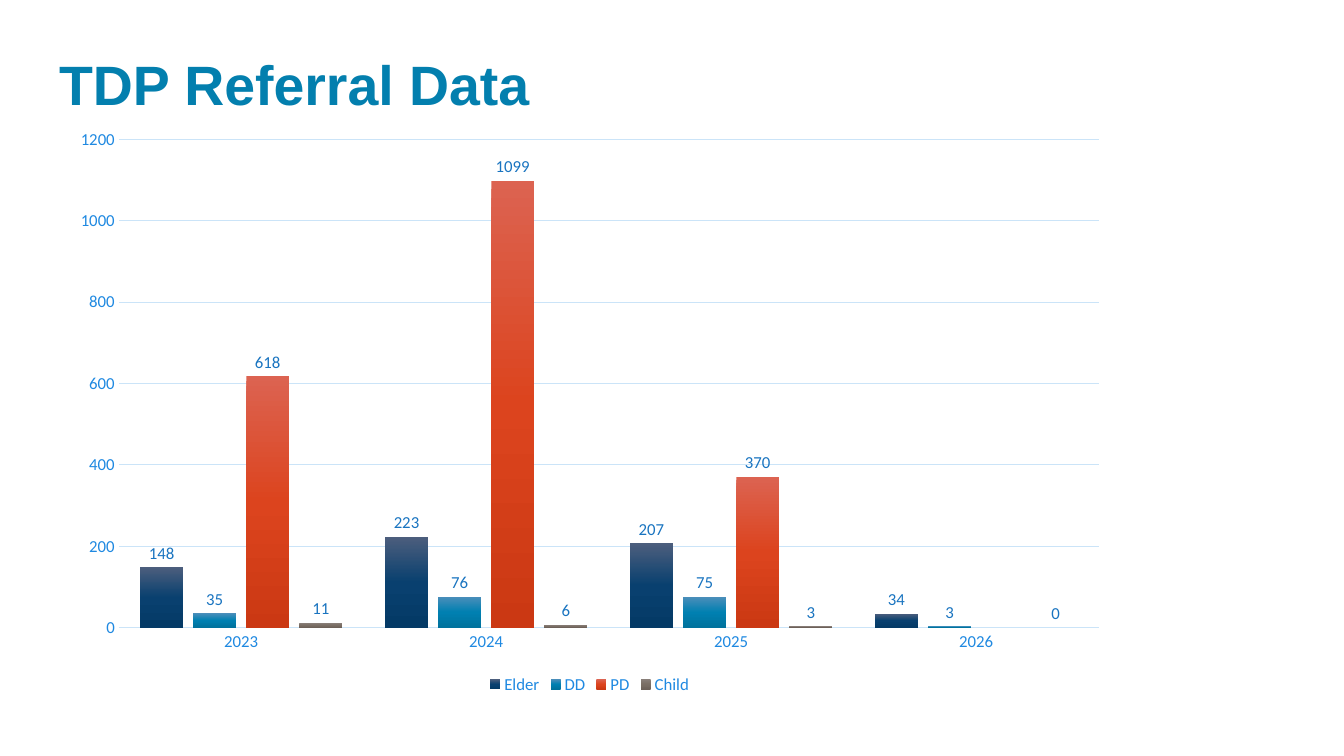
"""Build the TDP referral data slide."""
import copy
from dataclasses import dataclass

import pptx
import pptx.chart.data
import pptx.dml.color
import pptx.enum.chart
import pptx.enum.text
import pptx.oxml.ns
import pptx.util
from pptx.util import Cm


@dataclass(frozen=True)
class Theme:
    heading_font: str = "Arial"
    chart_font: str = "Calibri"
    heading_size: float = 39.6
    chart_size: float = 12
    heading: str = "037FAE"
    axis_text: str = "1F89E1"
    value_text: str = "1974C0"
    rule: str = "CBE4F8"
    elder: tuple = ("4C5E7D", "09406F", "043A66")
    dd: tuple = ("4B8EBA", "0080B1", "00729D")
    pd: tuple = ("DC6351", "DC441E", "CB3813")
    child: tuple = ("897F79", "7A6E65", "6D6159")


THEME = Theme()
YEARS = ("2023", "2024", "2025", "2026")
REFERRALS = (
    ("Elder", (148, 223, 207, 34), THEME.elder),
    ("DD", (35, 76, 75, 3), THEME.dd),
    ("PD", (618, 1099, 370, None), THEME.pd),
    ("Child", (11, 6, 3, 0), THEME.child),
)


def rgb(color):
    return pptx.dml.color.RGBColor.from_string(color)


def style_font(font, name, size, color, bold=False):
    font.name = name
    font.size = pptx.util.Pt(size)
    font.color.rgb = rgb(color)
    font.bold = bold


def style_line(line, width):
    line.color.rgb = rgb(THEME.rule)
    line.width = pptx.util.Pt(width)


def add_heading(slide, text):
    heading = slide.shapes.add_textbox(Cm(1.24), Cm(1.45), Cm(31.37), Cm(1.52))
    frame = heading.text_frame
    frame.word_wrap = True
    frame.vertical_anchor = pptx.enum.text.MSO_ANCHOR.MIDDLE
    frame.text = text
    paragraph = frame.paragraphs[0]
    paragraph.line_spacing = 0.9
    style_font(paragraph.runs[0].font, THEME.heading_font,
               THEME.heading_size, THEME.heading, bold=True)


def fill_gradient(series, colors):
    fill = series.format.fill
    fill.gradient()
    fill.gradient_angle = 270
    first_stop = series._element.find(".//" + pptx.oxml.ns.qn("a:gs"))
    first_stop.addnext(copy.deepcopy(first_stop))
    for stop, color, position in zip(fill.gradient_stops, colors, (0, 0.5, 1)):
        stop.color.rgb = rgb(color)
        stop.position = position


def style_series(series, colors):
    fill_gradient(series, colors)
    series.invert_if_negative = False
    labels = series.data_labels
    labels.show_value = True
    labels.position = pptx.enum.chart.XL_LABEL_POSITION.OUTSIDE_END
    style_font(labels.font, THEME.chart_font, THEME.chart_size, THEME.value_text)


def style_axes(chart):
    years, counts = chart.category_axis, chart.value_axis
    for axis in (years, counts):
        axis.major_tick_mark = pptx.enum.chart.XL_TICK_MARK.NONE
        axis.minor_tick_mark = pptx.enum.chart.XL_TICK_MARK.NONE
        style_font(axis.tick_labels.font, THEME.chart_font,
                   THEME.chart_size, THEME.axis_text)
    style_line(years.format.line, 1)
    counts.format.line.fill.background()
    counts.minimum_scale, counts.maximum_scale = 0, 1200
    counts.major_unit = 200
    counts.has_major_gridlines = True
    style_line(counts.major_gridlines.format.line, 0.75)


def add_referral_chart(slide):
    referrals = pptx.chart.data.CategoryChartData()
    referrals.categories = YEARS
    for name, counts, _ in REFERRALS:
        referrals.add_series(name, counts)
    chart = slide.shapes.add_chart(
        pptx.enum.chart.XL_CHART_TYPE.COLUMN_CLUSTERED,
        Cm(1.5), Cm(2.97), Cm(26.72), Cm(14.63), referrals).chart
    chart.has_title = False
    style_font(chart.font, THEME.chart_font, THEME.chart_size, THEME.axis_text)
    columns = chart.plots[0]
    columns.gap_width = 100
    columns.overlap = -24
    columns.vary_by_categories = False
    for series, (_, _, colors) in zip(columns.series, REFERRALS):
        style_series(series, colors)
    style_axes(chart)
    chart.has_legend = True
    chart.legend.position = pptx.enum.chart.XL_LEGEND_POSITION.BOTTOM
    chart.legend.include_in_layout = False
    style_font(chart.legend.font, THEME.chart_font,
               THEME.chart_size, THEME.axis_text)


def main():
    deck = pptx.Presentation()
    deck.slide_width, deck.slide_height = Cm(33.87), Cm(19.05)
    slide = deck.slides.add_slide(deck.slide_layouts[6])
    add_heading(slide, "TDP Referral Data")
    add_referral_chart(slide)
    deck.save("out.pptx")


if __name__ == "__main__":
    main()
